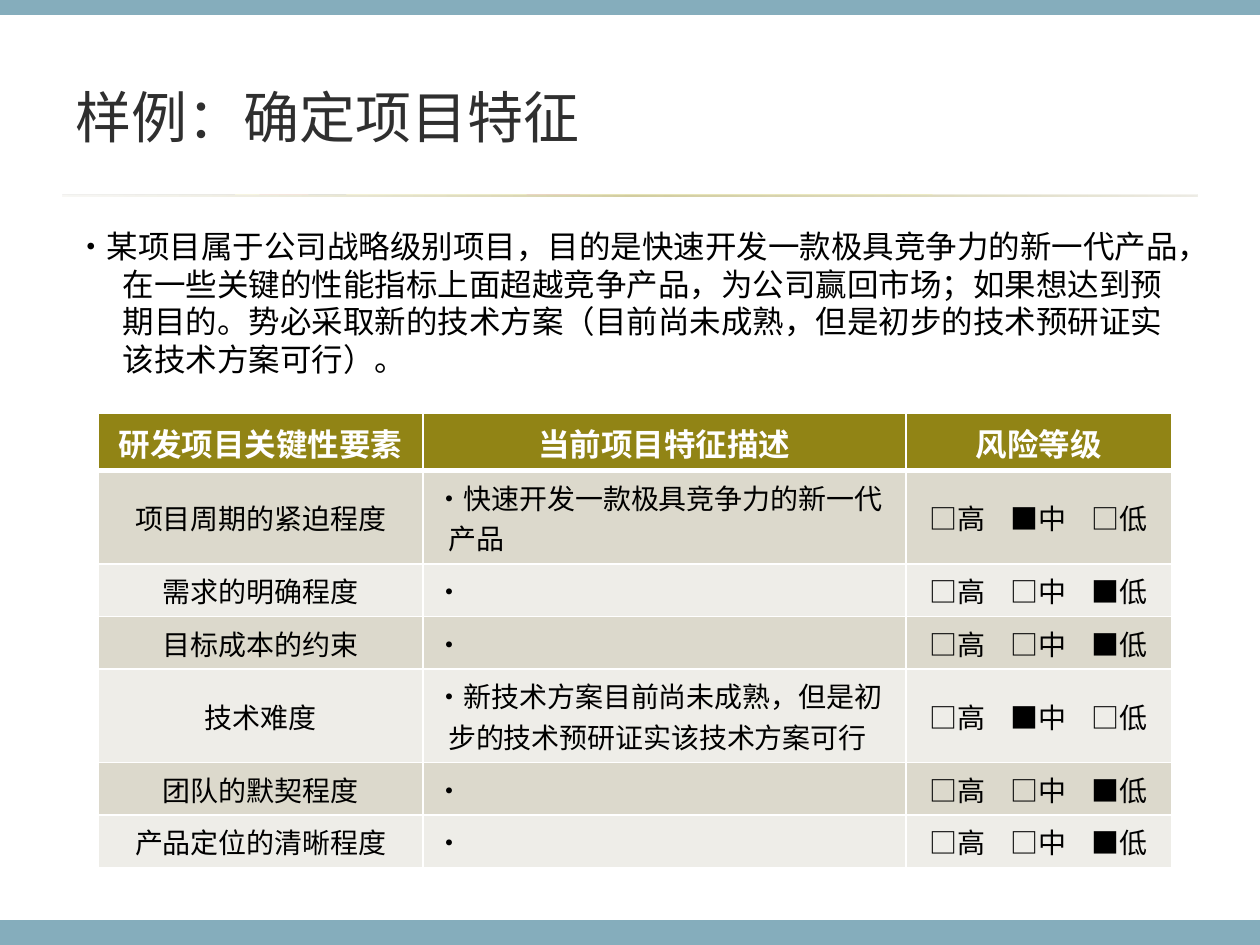
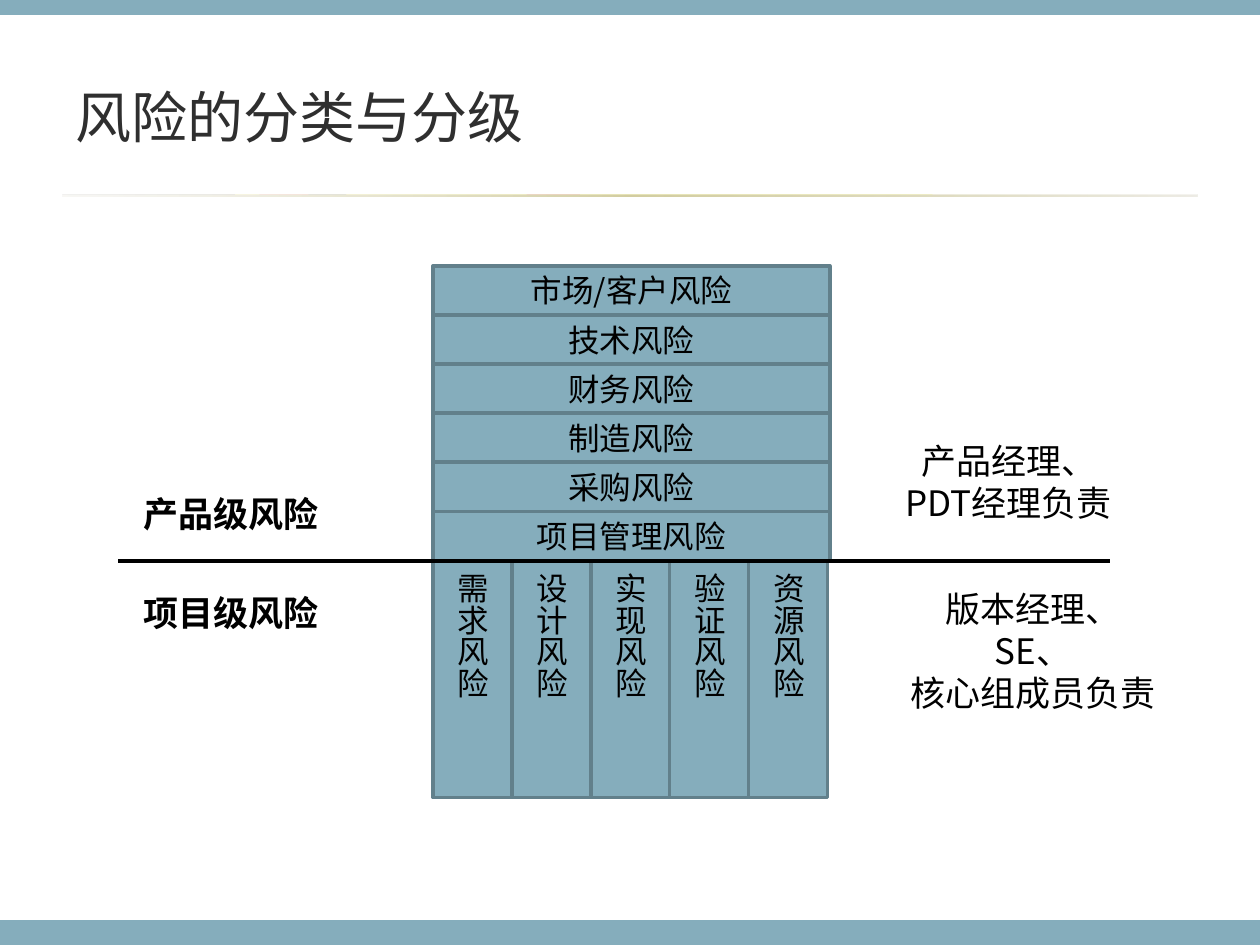
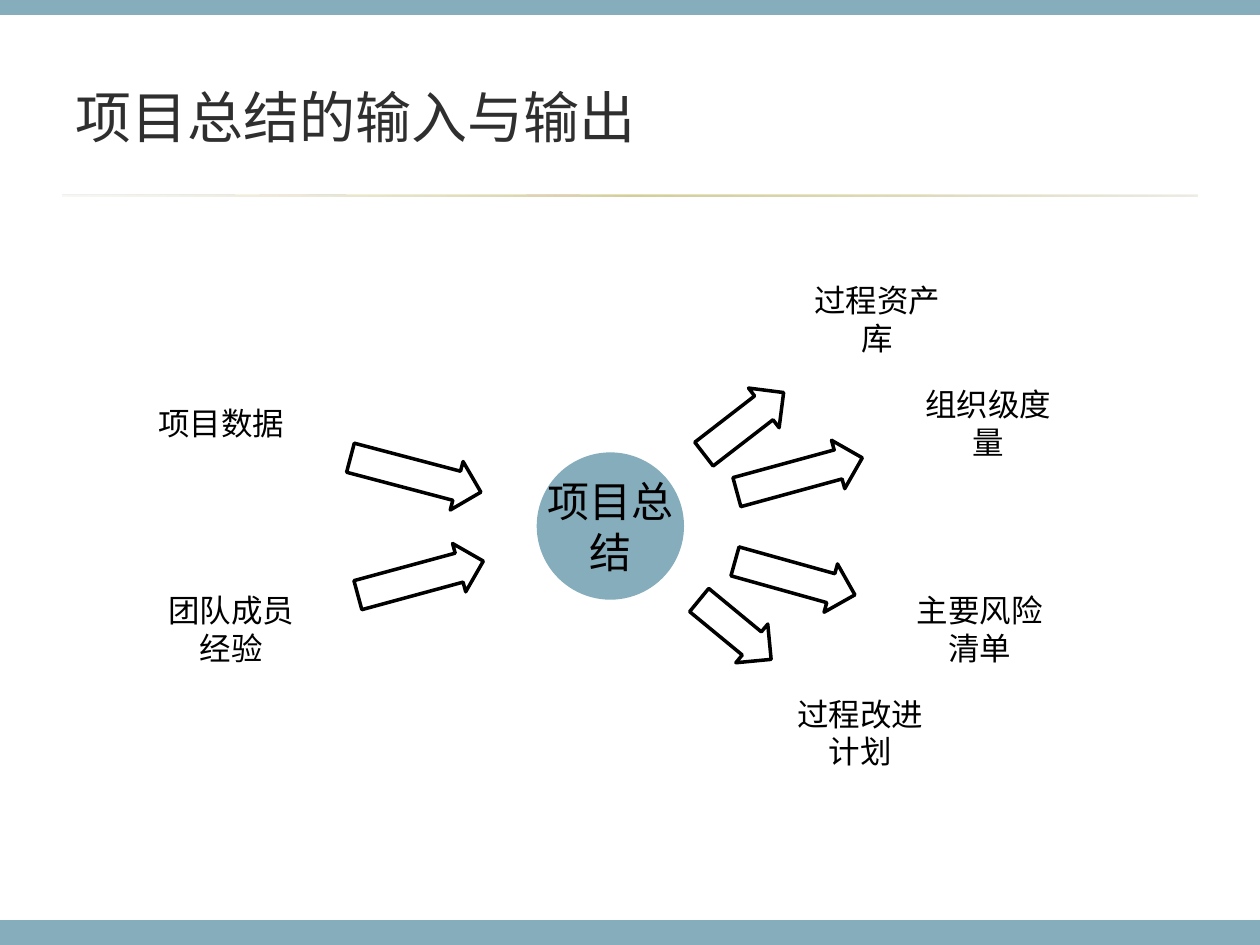
from lxml.etree import Element, SubElement
from pptx import Presentation
from pptx.dml.color import RGBColor
from pptx.enum.shapes import MSO_CONNECTOR, MSO_SHAPE, PP_PLACEHOLDER
from pptx.enum.text import MSO_ANCHOR as Anchor, PP_ALIGN as Align
from pptx.oxml.ns import qn
from pptx.util import Cm, Pt

COLORS = {
    "band": "85ADBC", "edge": "62808B", "title": "2F2F2F", "black": "000000",
    "white": "FFFFFF", "olive": "918415", "odd": "DCD9CC", "even": "EEEDE8",
}
CJK, LATIN = "Noto Sans CJK SC", "Roboto"


def color(key):
    return RGBColor.from_string(COLORS[key])


# ---- Elements ----
def write_text(frame, text, size=18, ink="black", bold=False, align=Align.CENTER,
               anchor=Anchor.MIDDLE, font=CJK, inset=None, hanging=None):
    frame.word_wrap = True
    frame.vertical_anchor = anchor
    if inset is not None:
        frame.margin_left = frame.margin_right = Cm(inset)
        frame.margin_top = frame.margin_bottom = Cm(inset)
    for index, line in enumerate(text.split("\n")):
        paragraph = frame.add_paragraph() if index else frame.paragraphs[0]
        paragraph.alignment = align
        if hanging:
            properties = paragraph._p.get_or_add_pPr()
            properties.set("marL", str(Cm(hanging)))
            properties.set("indent", str(-Cm(hanging)))
        run = paragraph.add_run()
        run.text = line
        run.font.size, run.font.bold, run.font.name = Pt(size), bold, font
        run.font.color.rgb = color(ink)
        SubElement(run._r.get_or_add_rPr(), qn("a:ea"), typeface=CJK)


def add_label(slide, text, left, top, width, height, **style):
    box = slide.shapes.add_textbox(Cm(left), Cm(top), Cm(width), Cm(height))
    write_text(box.text_frame, text, **style)


def add_block(slide, kind, left, top, width, height, fill="band", edge=None):
    block = slide.shapes.add_shape(kind, Cm(left), Cm(top), Cm(width), Cm(height))
    block.shadow.inherit = False
    block.fill.solid()
    block.fill.fore_color.rgb = color(fill)
    if edge:
        block.line.color.rgb = color(edge)
        block.line.width = Pt(2)
    else:
        block.line.fill.background()
    return block


def add_arrow(slide, left, top, length, rotation):
    arrow = add_block(slide, MSO_SHAPE.RIGHT_ARROW, left, top, length, 1.01,
                      "white", "black")
    arrow.adjustments[0], arrow.adjustments[1] = 0.6, 0.5
    arrow.rotation = rotation


def add_divider(slide, left, right, y):
    divider = slide.shapes.add_connector(
        MSO_CONNECTOR.STRAIGHT, Cm(left), Cm(y), Cm(right), Cm(y))
    divider.line.color.rgb = color("black")
    divider.line.width = Pt(2.25)
    SubElement(divider.element.spPr, qn("a:effectLst"))


def fade_rule(rule):
    rule.fill.gradient()
    rule.fill.gradient_angle = 0
    stops = rule.element.spPr.find(".//" + qn("a:gsLst"))
    for stop in list(stops):
        stops.remove(stop)
    for position, key, alpha in ((0, "odd", 20), (50, "olive", 40), (100, "odd", 50)):
        stop = SubElement(stops, qn("a:gs"), pos=str(position * 1000))
        tone = SubElement(stop, qn("a:srgbClr"), val=COLORS[key])
        SubElement(tone, qn("a:alpha"), val=str(alpha * 1000))


# ---- Shared frame ----
def add_frame_to_layout(layout, slide):
    """Draw the bands and the title rule once, then move them to the layout."""
    for placeholder in list(layout.placeholders):
        if placeholder.placeholder_format.type != PP_PLACEHOLDER.TITLE:
            placeholder.element.getparent().remove(placeholder.element)
    rule = add_block(slide, MSO_SHAPE.RECTANGLE, 1.27, 3.92, 22.86, 0.04)
    fade_rule(rule)
    bottom_band = add_block(slide, MSO_SHAPE.RECTANGLE, 0, 18.55, 25.4, 0.5)
    top_band = add_block(slide, MSO_SHAPE.RECTANGLE, 0, 0, 25.4, 0.3)
    for part in (bottom_band, top_band, rule):
        layout.shapes.element.append(part.element)


def add_titled_slide(deck, title):
    slide = deck.slides.add_slide(deck.slide_layouts[5])
    heading = slide.shapes.title
    heading.left, heading.top = Cm(1.27), Cm(0.76)
    heading.width, heading.height = Cm(22.86), Cm(3.18)
    write_text(heading.text_frame, title, size=32, ink="title", align=Align.LEFT)
    return slide


# ---- Slide 1: project features ----
def risk_choice(chosen):
    return "\t".join(("■" if level == chosen else "□") + level for level in "高中低")


def set_choice_tabs(cell):
    cell.margin_left = Cm(0.48)
    properties = cell.text_frame.paragraphs[0]._p.get_or_add_pPr()
    tabs = SubElement(properties, qn("a:tabLst"))
    for step in (1, 2):
        SubElement(tabs, qn("a:tab"), pos=str(Cm(1.63 * step)), algn="l")


def underline_cell(cell):
    border = Element(qn("a:lnB"), w=str(Pt(3)))
    SubElement(SubElement(border, qn("a:solidFill")), qn("a:srgbClr"),
               val=COLORS["white"])
    cell._tc.get_or_add_tcPr().insert(0, border)


def add_feature_table(slide, headers, features):
    grid = slide.shapes.add_table(
        len(features) + 1, len(headers), Cm(1.98), Cm(8.33), Cm(21.64), Cm(9.16)).table
    for column, width in zip(grid.columns, (6.55, 9.73, 5.36)):
        column.width = Cm(width)
    rows = [headers] + [(name, "·" + note, risk_choice(level))
                        for name, note, level in features]
    for r, values in enumerate(rows):
        has_note = len(values[1]) > 1
        grid.rows[r].height = Cm(1.16 if r == 0 else 1.88 if has_note else 1.06)
        fill = "olive" if r == 0 else "odd" if r % 2 else "even"
        for c, value in enumerate(values):
            cell = grid.cell(r, c)
            cell.fill.solid()
            cell.fill.fore_color.rgb = color(fill)
            cell.vertical_anchor = Anchor.MIDDLE
            if r == 0:
                write_text(cell.text_frame, value, ink="white", bold=True)
                underline_cell(cell)
            else:
                write_text(cell.text_frame, value, size=16,
                           align=Align.LEFT if c else Align.CENTER,
                           hanging=0.25 if c == 1 else None)
                if c == 2:
                    set_choice_tabs(cell)


def fill_features(slide):
    add_label(slide, "·某项目属于公司战略级别项目，目的是快速开发一款极具竞争力的新一代产品，"
              "在一些关键的性能指标上面超越竞争产品，为公司赢回市场；如果想达到预期目的。"
              "势必采取新的技术方案（目前尚未成熟，但是初步的技术预研证实该技术方案可行）。",
              1.27, 4.45, 22.86, 3.68, align=Align.LEFT, anchor=Anchor.TOP, hanging=0.96)
    add_feature_table(slide, ("研发项目关键性要素", "当前项目特征描述", "风险等级"), [
        ("项目周期的紧迫程度", "快速开发一款极具竞争力的新一代产品", "中"),
        ("需求的明确程度", "", "低"),
        ("目标成本的约束", "", "低"),
        ("技术难度", "新技术方案目前尚未成熟，但是初步的技术预研证实该技术方案可行", "中"),
        ("团队的默契程度", "", "低"),
        ("产品定位的清晰程度", "", "低"),
    ])


# ---- Slide 2: risk classes and levels ----
def fill_risk_levels(slide):
    left, top, row_height, column_width = 8.73, 5.36, 0.99, 1.59
    product_risks = ("市场/客户风险", "技术风险", "财务风险", "制造风险",
                     "采购风险", "项目管理风险")
    project_risks = ("需求风险", "设计风险", "实现风险", "验证风险", "资源风险")
    boundary = top + len(product_risks) * row_height

    for index, risk in enumerate(product_risks):
        row = add_block(slide, MSO_SHAPE.RECTANGLE, left, top + index * row_height,
                        8, row_height, edge="edge")
        write_text(row.text_frame, risk)
    for index, risk in enumerate(project_risks):
        column = add_block(slide, MSO_SHAPE.RECTANGLE, left + index * column_width,
                           boundary, column_width, 4.78, edge="edge")
        write_text(column.text_frame, risk, align=Align.LEFT)
        column.text_frame._txBody.bodyPr.set("vert", "eaVert")

    for text, x, y, width, height, bold in (
            ("产品级风险", 2.18, 9.8, 4.95, 1.12, True),
            ("项目级风险", 2.18, 11.79, 4.95, 1.12, True),
            ("产品经理、\nPDT经理负责", 17.86, 8.74, 4.95, 1.96, False),
            ("版本经理、SE、\n核心组成员负责", 18.05, 11.71, 5.56, 1.96, False)):
        add_label(slide, text, x, y, width, height, size=20, bold=bold,
                  anchor=Anchor.TOP)
    add_divider(slide, 2.38, 22.38, boundary)


# ---- Slide 3: inputs and outputs ----
def fill_inputs_outputs(slide):
    node = 2.97
    add_block(slide, MSO_SHAPE.OVAL, 10.82, 9.12, node, node)
    add_label(slide, "项目总结", 10.82, 9.12, node, node, size=24, font=LATIN, inset=0.08)
    # label, its left and top, then the arrow's left, top, length and rotation
    for text, x, y, *arrow in (
            ("过程资产库", 16.2, 4.95, 13.98, 8.03, 2.03, 322.3),
            ("组织级度量", 18.44, 7.04, 14.81, 9.07, 2.62, 344.7),
            ("主要风险清单", 18.27, 11.2, 14.77, 11.15, 2.51, 15.6),
            ("过程改进计划", 15.86, 13.28, 13.88, 12.19, 1.88, 39.5),
            ("团队成员经验", 3.18, 11.2, 7.17, 11.15, 2.62, 344.8),
            ("项目数据", 2.98, 7.04, 7.02, 9.07, 2.72, 14.8)):
        add_arrow(slide, *arrow)
        add_label(slide, text, x, y, node, node, font=LATIN, inset=0.08)


def main():
    deck = Presentation()
    deck.slide_width, deck.slide_height = Cm(25.4), Cm(19.05)

    features = add_titled_slide(deck, "样例：确定项目特征")
    add_frame_to_layout(deck.slide_layouts[5], features)
    fill_features(features)
    fill_risk_levels(add_titled_slide(deck, "风险的分类与分级"))
    fill_inputs_outputs(add_titled_slide(deck, "项目总结的输入与输出"))
    deck.save("out.pptx")


if __name__ == "__main__":
    main()
